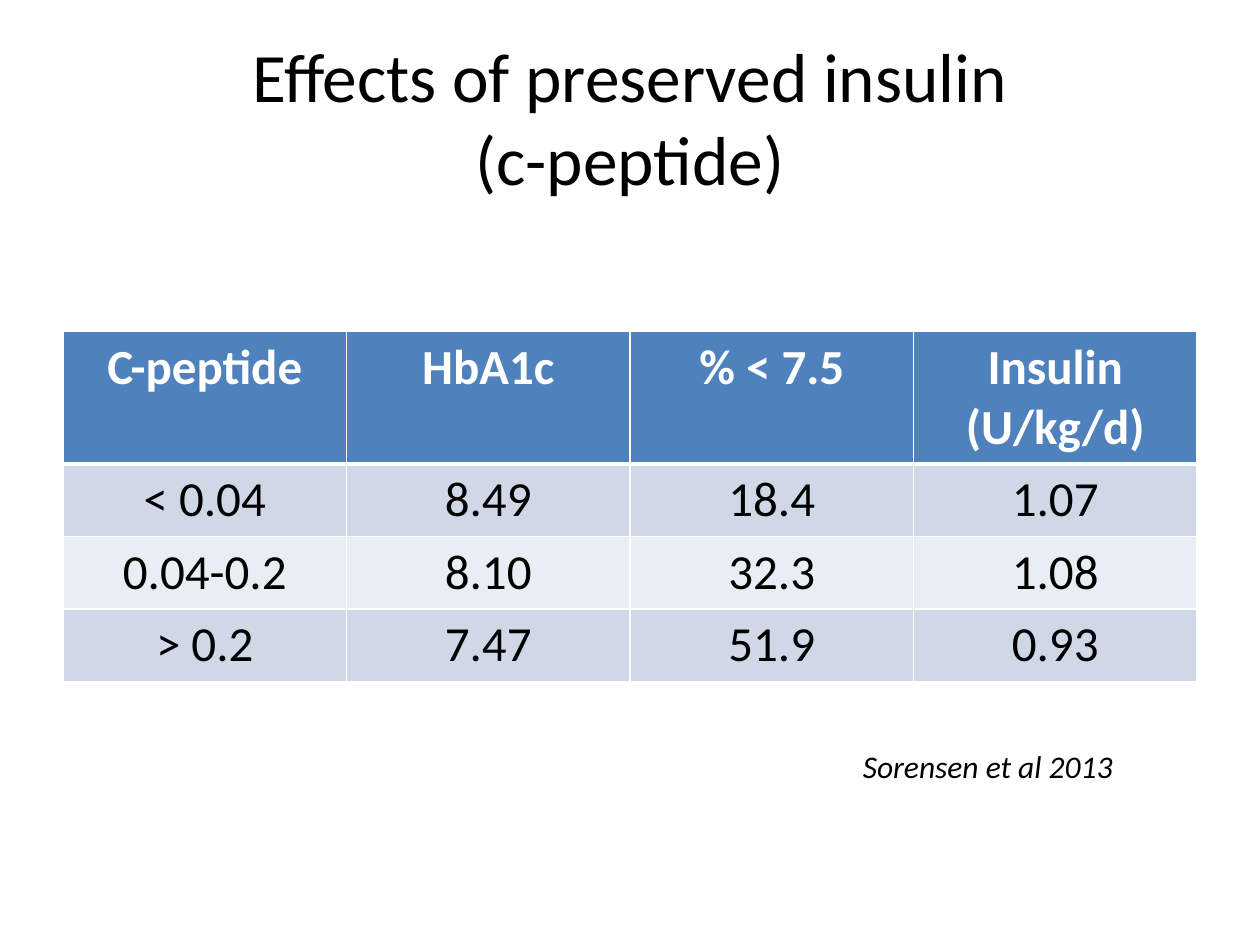
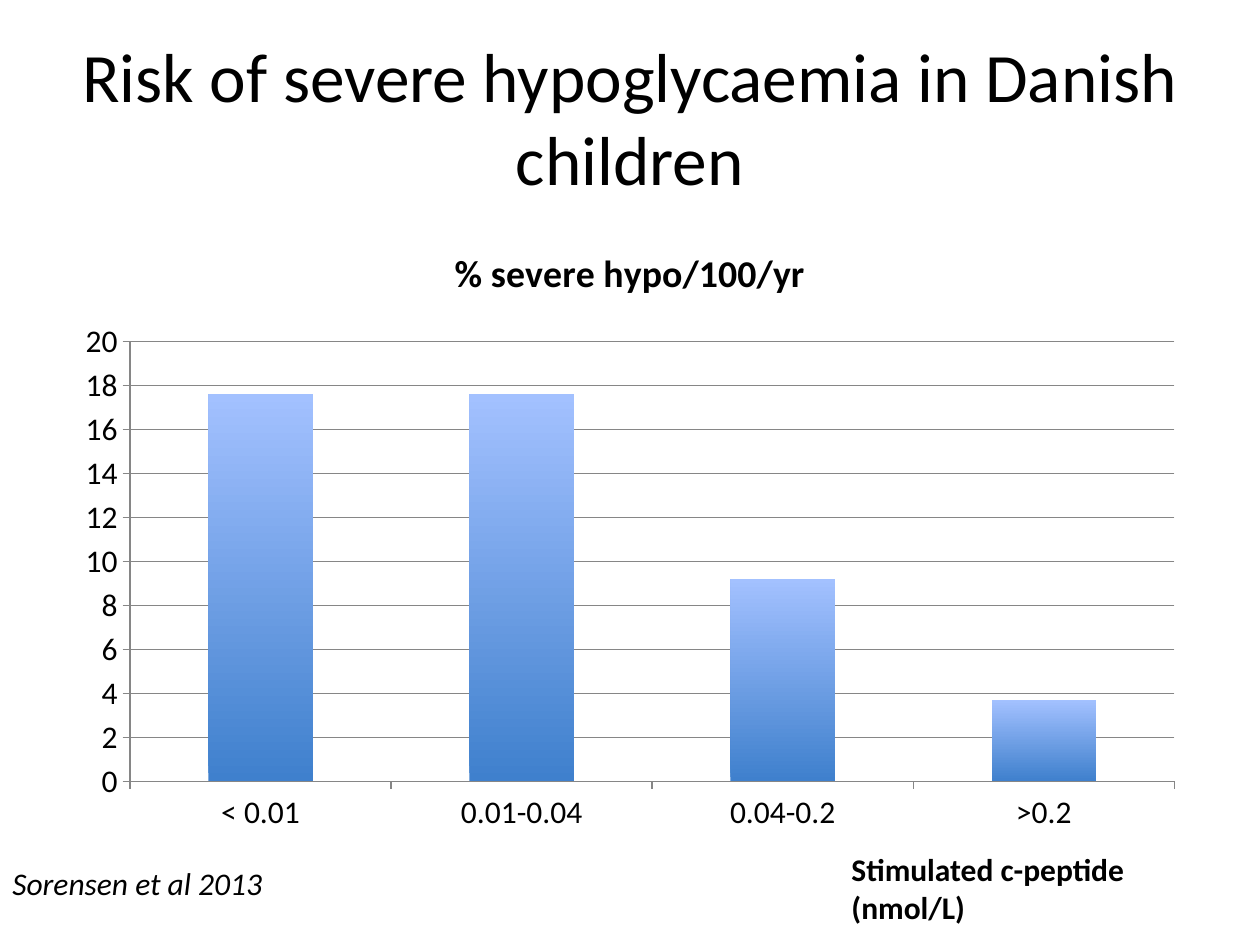
"""Builds two slides on preserved insulin: a results table and a risk chart."""
from lxml import etree
from pptx import Presentation
from pptx.chart.data import CategoryChartData
from pptx.dml.color import RGBColor
from pptx.enum.chart import XL_CHART_TYPE, XL_TICK_MARK
from pptx.enum.text import MSO_ANCHOR, MSO_AUTO_SIZE, PP_ALIGN
from pptx.oxml.ns import qn
from pptx.util import Pt

COLUMNS = XL_CHART_TYPE.COLUMN_CLUSTERED
TICK_OUT = XL_TICK_MARK.OUTSIDE
MIDDLE = MSO_ANCHOR.MIDDLE
GROW = MSO_AUTO_SIZE.SHAPE_TO_FIT_TEXT
NO_FIT = MSO_AUTO_SIZE.NONE
CENTER = PP_ALIGN.CENTER

FONT = "Calibri"
COLORS = {
    "text": "000000",
    "white": "FFFFFF",
    "header": "4F81BD",
    "odd_row": "D0D8E8",
    "even_row": "E9EDF4",
    "bar_top": "A3C1FF",
    "bar_bottom": "3F80CD",
    "axis": "868686",
}
MARGIN = 36
CONTENT_WIDTH = 648
CITATION = "Sorensen et al 2013"
RESULTS = [
    ["C-peptide", "HbA1c", "% < 7.5", "Insulin (U/kg/d)"],
    ["< 0.04", "8.49", "18.4", "1.07"],
    ["0.04-0.2", "8.10", "32.3", "1.08"],
    ["> 0.2", "7.47", "51.9", "0.93"],
]
HYPO_RATES = {"< 0.01": 17.6, "0.01-0.04": 17.6, "0.04-0.2": 9.2, ">0.2": 3.7}


def color(name):
    """Return the named colour."""
    return RGBColor.from_string(COLORS[name])


def style_font(font, size, name="text", bold=False, italic=False):
    """Set typeface, size, colour and weight."""
    font.name = FONT
    font.size = Pt(size)
    font.bold = bold
    font.italic = italic
    font.color.rgb = color(name)


def add_page(deck, title):
    """Add a slide with a centred title."""
    page = deck.slides.add_slide(deck.slide_layouts[5])
    box = page.shapes.title
    box.left, box.top = Pt(MARGIN), Pt(21.6)
    box.width, box.height = Pt(CONTENT_WIDTH), Pt(90)
    frame = box.text_frame
    frame.text = title
    frame.auto_size = NO_FIT
    frame.vertical_anchor = MIDDLE
    para = frame.paragraphs[0]
    para.alignment = CENTER
    style_font(para.font, 39.6)
    return page


def add_caption(page, text, left, top, width, height, **style):
    """Add an 18 point text box that does not wrap."""
    box = page.shapes.add_textbox(Pt(left), Pt(top), Pt(width), Pt(height))
    frame = box.text_frame
    frame.text = text
    frame.word_wrap = False
    frame.auto_size = GROW
    for para in frame.paragraphs:
        style_font(para.font, 18, **style)


def set_borders(cell, widths):
    """Draw white cell borders, given widths by side in schema order."""
    properties = cell._tc.get_or_add_tcPr()
    for index, (side, width) in enumerate(widths.items()):
        line = etree.Element(qn(f"a:ln{side}"), w=str(Pt(width)))
        fill = etree.SubElement(line, qn("a:solidFill"))
        etree.SubElement(fill, qn("a:srgbClr"), val=COLORS["white"])
        properties.insert(index, line)


def add_results_table(page, rows):
    """Add the banded table with a heavy rule under its header."""
    heights = [74.4] + [40.8] * (len(rows) - 1)
    table = page.shapes.add_table(len(rows), len(rows[0]), Pt(MARGIN), Pt(189.4),
                                  Pt(CONTENT_WIDTH), Pt(sum(heights))).table
    for row_index, values in enumerate(rows):
        table.rows[row_index].height = Pt(heights[row_index])
        is_header = row_index == 0
        band = "header" if is_header else "odd_row" if row_index % 2 else "even_row"
        borders = {"L": 1, "R": 1, "T": 3 if row_index == 1 else 1,
                   "B": 3 if is_header else 1}
        for column_index, value in enumerate(values):
            cell = table.cell(row_index, column_index)
            cell.text = value
            cell.fill.solid()
            cell.fill.fore_color.rgb = color(band)
            para = cell.text_frame.paragraphs[0]
            para.alignment = CENTER
            style_font(para.font, 28, "white" if is_header else "text", is_header)
            set_borders(cell, borders)


def style_axis(axis):
    """Give an axis its line, tick marks and labels."""
    axis.major_tick_mark = TICK_OUT
    axis.format.line.color.rgb = color("axis")
    axis.format.line.width = Pt(0.75)
    style_font(axis.tick_labels.font, 18)


def add_rate_chart(page, title, rates):
    """Add the column chart with gradient bars."""
    data = CategoryChartData()
    data.categories = list(rates)
    data.add_series("Series 1", list(rates.values()))
    chart = page.shapes.add_chart(COLUMNS, Pt(MARGIN), Pt(126), Pt(CONTENT_WIDTH),
                                  Pt(356.4), data).chart
    style_font(chart.font, 18)
    chart.has_legend = False
    chart.has_title = True
    heading = chart.chart_title.text_frame
    heading.text = title
    style_font(heading.paragraphs[0].font, 21.6, bold=True)

    style_axis(chart.category_axis)
    scale = chart.value_axis
    style_axis(scale)
    scale.minimum_scale, scale.maximum_scale, scale.major_unit = 0, 20, 2
    scale.has_major_gridlines = True
    gridline = scale.major_gridlines.format.line
    gridline.color.rgb = color("axis")
    gridline.width = Pt(0.75)

    plot = chart.plots[0]
    plot.gap_width = 150
    plot.vary_by_categories = False
    fill = plot.series[0].format.fill
    fill.gradient()
    fill.gradient_angle = 90
    for stop, name in zip(fill.gradient_stops, ("bar_bottom", "bar_top")):
        stop.color.rgb = color(name)


def main():
    """Build and save the deck."""
    deck = Presentation()
    deck.slide_width, deck.slide_height = Pt(720), Pt(540)

    page = add_page(deck, "Effects of preserved insulin\v(c-peptide)")
    add_results_table(page, RESULTS)
    add_caption(page, CITATION, 486, 423.4, 163.4, 28.8, italic=True)

    page = add_page(deck, "Risk of severe hypoglycaemia in Danish children")
    add_rate_chart(page, "% severe hypo/100/yr", HYPO_RATES)
    add_caption(page, CITATION, 0, 490.3, 163.4, 28.8, italic=True)
    add_caption(page, "Stimulated c-peptide\n(nmol/L)", 479.5, 482.4, 172, 51.1, bold=True)

    deck.save("out.pptx")


if __name__ == "__main__":
    main()
